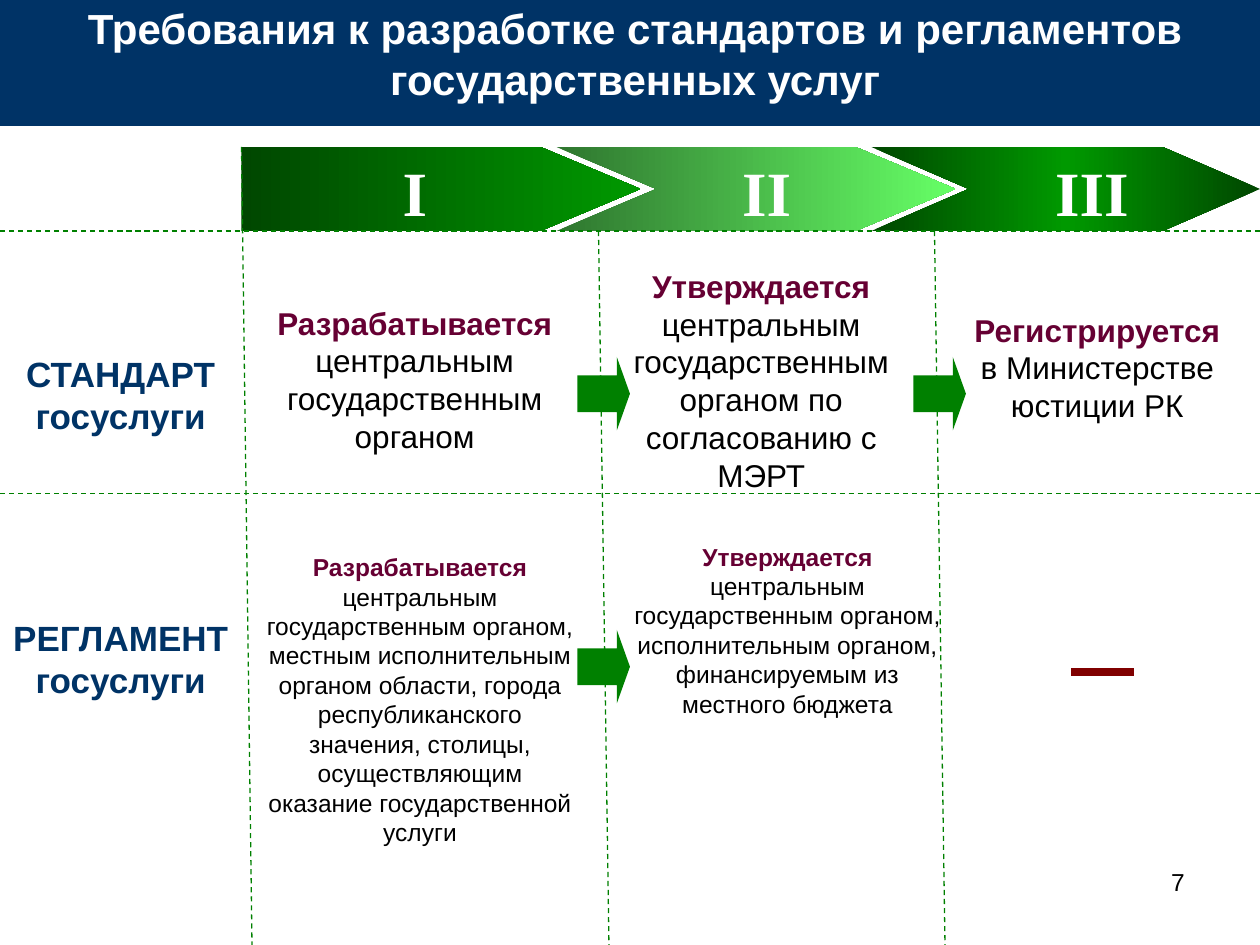
"""Build the slide on requirements for public service standards and regulations."""
from lxml.etree import SubElement
from pptx import Presentation
from pptx.dml.color import RGBColor
from pptx.enum.dml import MSO_LINE_DASH_STYLE as Dash
from pptx.enum.shapes import MSO_CONNECTOR as Connector, MSO_SHAPE as Shape
from pptx.enum.text import PP_ALIGN as Align
from pptx.oxml.ns import qn
from pptx.util import Pt

NAVY, GREEN, PLUM, MAROON = "003366", "008000", "660033", "800000"
WHITE, BLACK = "FFFFFF", "000000"

TITLE = "Требования к разработке стандартов и регламентов государственных услуг"
STAGES = [
    ("III", Shape.CHEVRON, 498, 222, 1.16, ["004700", "009900", "004700"], (534, 180)),
    ("II", Shape.CHEVRON, 318, 228, 1.19, ["2F762F", "66FF66"], (336, 204)),
    ("I", Shape.PENTAGON, 138, 228, 1.19, ["004700", "009900"], (138, 198)),
]
ROW_LABELS = [("СТАНДАРТ", 198), ("РЕГЛАМЕНТ", 349)]
STEPS = [
    (150, 170, 174, 94, 18, "Разрабатывается",
     [" центральным государственным органом"]),
    (342, 149, 186, 138, 18, "Утверждается",
     [" центральным государственным органом по согласованию с МЭРТ"]),
    (546, 174, 162, 72, 18, "Регистрируется", [" в Министерстве юстиции РК"]),
    (144, 312, 192, 175, 14, "Разрабатывается",
     [" центральным государственным органом,",
      "местным исполнительным органом области, города республиканского значения, "
      "столицы, осуществляющим оказание государственной услуги"]),
    (354, 306, 192, 108, 14, "Утверждается",
     [" центральным государственным органом,",
      "исполнительным органом, финансируемым из местного бюджета"]),
]
ROW_LINES = [132, 282]
COLUMN_LINES = [(138, 84), (342, 132), (534, 132)]
ARROWS = [(330, 204), (522, 204), (330, 360)]


def color(value):
    return RGBColor.from_string(value)


def add_block(slide, kind, left, top, width, height, fill=None):
    shape = slide.shapes.add_shape(kind, Pt(left), Pt(top), Pt(width), Pt(height))
    shape.shadow.inherit = False
    shape.line.fill.background()
    if fill:
        shape.fill.solid()
        shape.fill.fore_color.rgb = color(fill)
    return shape


def set_gradient(shape, colors):
    shape.fill.gradient()
    shape.fill.gradient_angle = 0
    stops = shape.fill._fill._gradFill.find(qn("a:gsLst"))
    for stop in list(stops):
        stops.remove(stop)
    for index, value in enumerate(colors):
        position = 100000 * index // (len(colors) - 1)
        stop = SubElement(stops, qn("a:gs"), pos=str(position))
        SubElement(stop, qn("a:srgbClr"), val=value)


def add_line(slide, start, end, value, width, dashed=True):
    points = [Pt(length) for length in (*start, *end)]
    line = slide.shapes.add_connector(Connector.STRAIGHT, *points)
    line.line.color.rgb = color(value)
    line.line.width = Pt(width)
    if dashed:
        line.line.dash_style = Dash.DASH
    SubElement(line._element.spPr, qn("a:effectLst"))


def add_text(slide, box, lines, size, value, bold=False, name="Arial", align=Align.CENTER):
    shape = slide.shapes.add_textbox(*[Pt(length) for length in box])
    frame = shape.text_frame
    frame.word_wrap = True
    for index, text in enumerate(lines):
        paragraph = frame.paragraphs[0] if index == 0 else frame.add_paragraph()
        paragraph.alignment = align
        paragraph.add_run().text = text
        font = paragraph.font
        font.size, font.name, font.bold = Pt(size), name, bold
        font.color.rgb = color(value)
    return frame


def add_step(slide, left, top, width, height, size, keyword, lines):
    frame = add_text(slide, (left, top, width, height), [keyword, *lines[1:]], size, BLACK)
    first = frame.paragraphs[0]
    first.runs[0].font.bold = True
    first.runs[0].font.color.rgb = color(PLUM)
    first.add_run().text = lines[0]


def main():
    presentation = Presentation()
    presentation.slide_width, presentation.slide_height = Pt(720), Pt(540)
    slide = presentation.slides.add_slide(presentation.slide_layouts[6])

    add_block(slide, Shape.RECTANGLE, 0, 0, 720, 72, NAVY)
    add_text(slide, (6, -2, 714, 65), [TITLE], 24, WHITE, True)

    for _, kind, left, width, tip, colors, _ in STAGES:
        stage = add_block(slide, kind, left, 84, width, 48)
        stage.adjustments[0] = tip
        set_gradient(stage, colors)
    for numeral, *_, (left, width) in STAGES:
        add_text(slide, (left, 84, width, 50), [numeral], 36, WHITE, True, "Times New Roman")

    for y in ROW_LINES:
        add_line(slide, (0, y), (720, y), GREEN, 0.75)
    for x, top in COLUMN_LINES:
        add_line(slide, (x, top), (x + 6, 540), GREEN, 0.75)

    for label, top in ROW_LABELS:
        add_text(slide, (0, top, 138, 55), [label, "госуслуги"], 20, NAVY, True)
    for step in STEPS:
        add_step(slide, *step)
    for left, top in ARROWS:
        arrow = add_block(slide, Shape.RIGHT_ARROW, left, top, 30, 42, GREEN)
        arrow.adjustments[1] = 0.25

    add_line(slide, (612, 384), (648, 384), MAROON, 4.5, dashed=False)
    add_text(slide, (516, 492, 168, 37), ["7"], 14, BLACK, align=Align.RIGHT)
    presentation.save("out.pptx")


if __name__ == "__main__":
    main()
